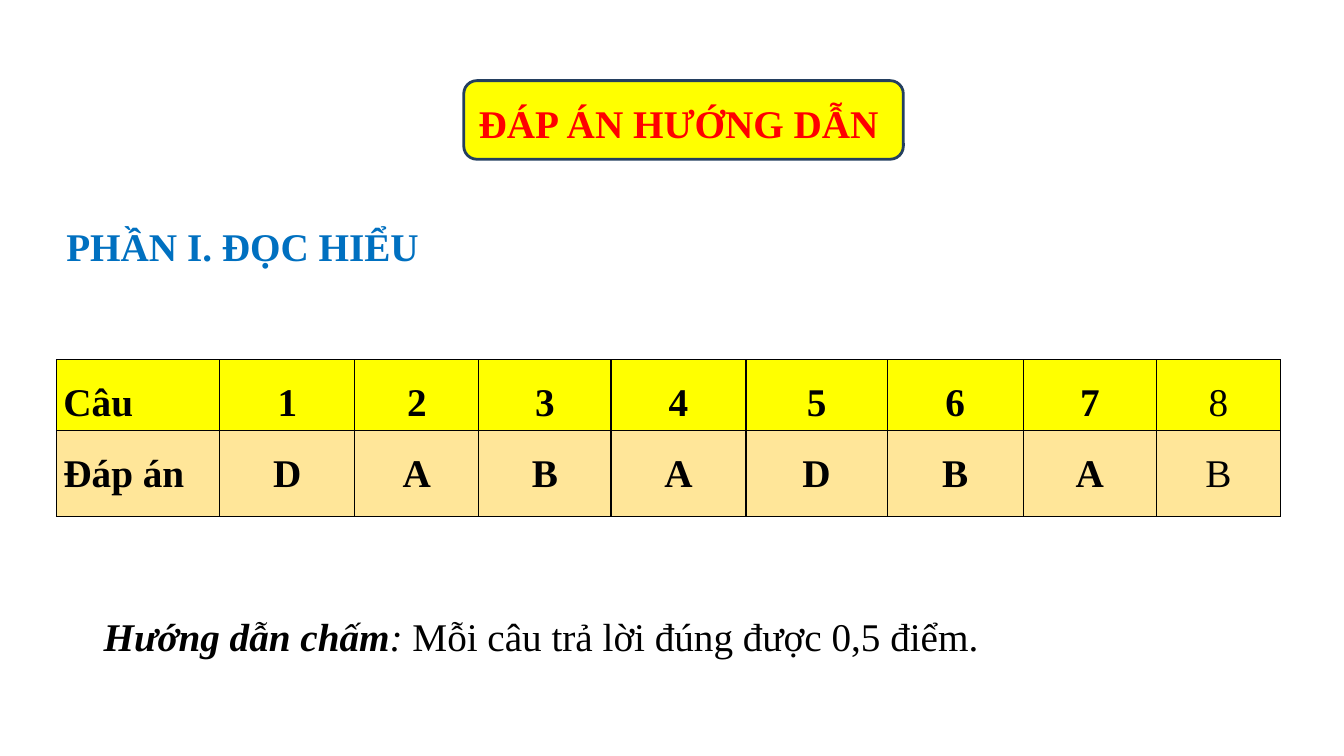
from dataclasses import dataclass

from lxml import etree
from pptx import Presentation
from pptx.dml.color import RGBColor
from pptx.enum import shapes, text
from pptx.oxml import ns
from pptx.util import Inches, Pt

COLORS = {
    "yellow": "FFFF00",
    "cream": "FFE699",
    "navy": "243F60",
    "red": "FF0000",
    "blue": "0070C0",
    "black": "000000",
    "white": "FFFFFF",
}
COLUMN_WIDTHS = [1.62, 1.34, 1.23, 1.31, 1.34, 1.4, 1.35, 1.32, 1.23]


@dataclass
class Span:
    text: str
    color: str = "black"
    bold: bool = False
    italic: bool = False


@dataclass
class Label:
    left: float
    top: float
    width: float
    spans: list[Span]
    height: float = 0.57


@dataclass
class AnswerRow:
    height: float
    fill: str
    heading: str
    entries: str


LABELS = [
    Label(0.56, 2.16, 3.83, [Span("PHẦN I. ĐỌC HIỂU", "blue", True)]),
    Label(0.93, 6.03, 8.97, [
        Span("Hướng dẫn chấm", bold=True, italic=True),
        Span(": ", italic=True),
        Span("Mỗi câu trả lời đúng được 0,5 điểm."),
    ]),
]
ANSWER_ROWS = [
    AnswerRow(0.64, "yellow", "Câu", "12345678"),
    AnswerRow(0.85, "cream", "Đáp án", "DABADBAB"),
]


def rgb(name: str) -> RGBColor:
    return RGBColor.from_string(COLORS[name])


def add_span(p, span: Span) -> None:
    r = p.add_run()
    r.text = span.text
    r.font.name = "Times New Roman"
    r.font.size = Pt(28)
    r.font.bold = span.bold
    r.font.italic = span.italic
    r.font.color.rgb = rgb(span.color)


def add_title(s) -> None:
    frame = s.shapes.add_shape(
        shapes.MSO_SHAPE.ROUNDED_RECTANGLE,
        Inches(4.6), Inches(0.8), Inches(4.36), Inches(0.78))
    frame.shadow.inherit = False
    frame.fill.solid()
    frame.fill.fore_color.rgb = rgb("yellow")
    frame.line.color.rgb = rgb("navy")
    frame.line.width = Pt(2)

    title = s.shapes.title
    title.left, title.top = Inches(4.48), Inches(0.87)
    title.width, title.height = Inches(4.5), Inches(0.61)
    title.element.getparent().append(title.element)
    tf = title.text_frame
    tf.word_wrap = True
    tf.auto_size = text.MSO_AUTO_SIZE.SHAPE_TO_FIT_TEXT
    tf.vertical_anchor = text.MSO_ANCHOR.TOP
    p = tf.paragraphs[0]
    p.alignment = text.PP_ALIGN.CENTER
    p.line_spacing = 1.15
    p.space_before = p.space_after = Pt(6)
    add_span(p, Span("ĐÁP ÁN HƯỚNG DẪN", "red", True))


def add_label(s, label: Label) -> None:
    box = s.shapes.add_textbox(
        Inches(label.left), Inches(label.top),
        Inches(label.width), Inches(label.height))
    tf = box.text_frame
    tf.word_wrap = False
    tf.auto_size = text.MSO_AUTO_SIZE.SHAPE_TO_FIT_TEXT
    for span in label.spans:
        add_span(tf.paragraphs[0], span)


def add_borders(cell) -> None:
    props = cell._tc.get_or_add_tcPr()
    for i, side in enumerate(("lnL", "lnR", "lnT", "lnB")):
        line = etree.Element(ns.qn(f"a:{side}"), w=str(Pt(1)))
        fill = etree.SubElement(line, ns.qn("a:solidFill"))
        etree.SubElement(fill, ns.qn("a:srgbClr"), val=COLORS["black"])
        props.insert(i, line)


def fill_cell(cell, span: Span, fill: str, alignment) -> None:
    cell.margin_left = cell.margin_right = Inches(0.07)
    cell.margin_top = cell.margin_bottom = 0
    cell.fill.solid()
    cell.fill.fore_color.rgb = rgb(fill)
    add_borders(cell)
    p = cell.text_frame.paragraphs[0]
    p.alignment = alignment
    p.line_spacing = 1.5
    add_span(p, span)


def add_answer_table(s) -> None:
    table = s.shapes.add_table(
        len(ANSWER_ROWS), len(COLUMN_WIDTHS), Inches(0.56), Inches(3.57),
        Inches(sum(COLUMN_WIDTHS)),
        Inches(sum(row.height for row in ANSWER_ROWS))).table
    table.first_row = table.horz_banding = False
    for column, width in zip(table.columns, COLUMN_WIDTHS):
        column.width = Inches(width)
    last = len(COLUMN_WIDTHS) - 1
    for i, row in enumerate(ANSWER_ROWS):
        table.rows[i].height = Inches(row.height)
        for j, value in enumerate([row.heading, *row.entries]):
            alignment = text.PP_ALIGN.CENTER if j else text.PP_ALIGN.JUSTIFY
            fill_cell(table.cell(i, j), Span(value, bold=j < last),
                      row.fill, alignment)


def main() -> None:
    prs = Presentation()
    prs.slide_width, prs.slide_height = Inches(13.33), Inches(7.5)
    s = prs.slides.add_slide(prs.slide_layouts[5])
    s.background.fill.solid()
    s.background.fill.fore_color.rgb = rgb("white")
    add_title(s)
    add_answer_table(s)
    for label in LABELS:
        add_label(s, label)
    prs.save("out.pptx")


if __name__ == "__main__":
    main()
